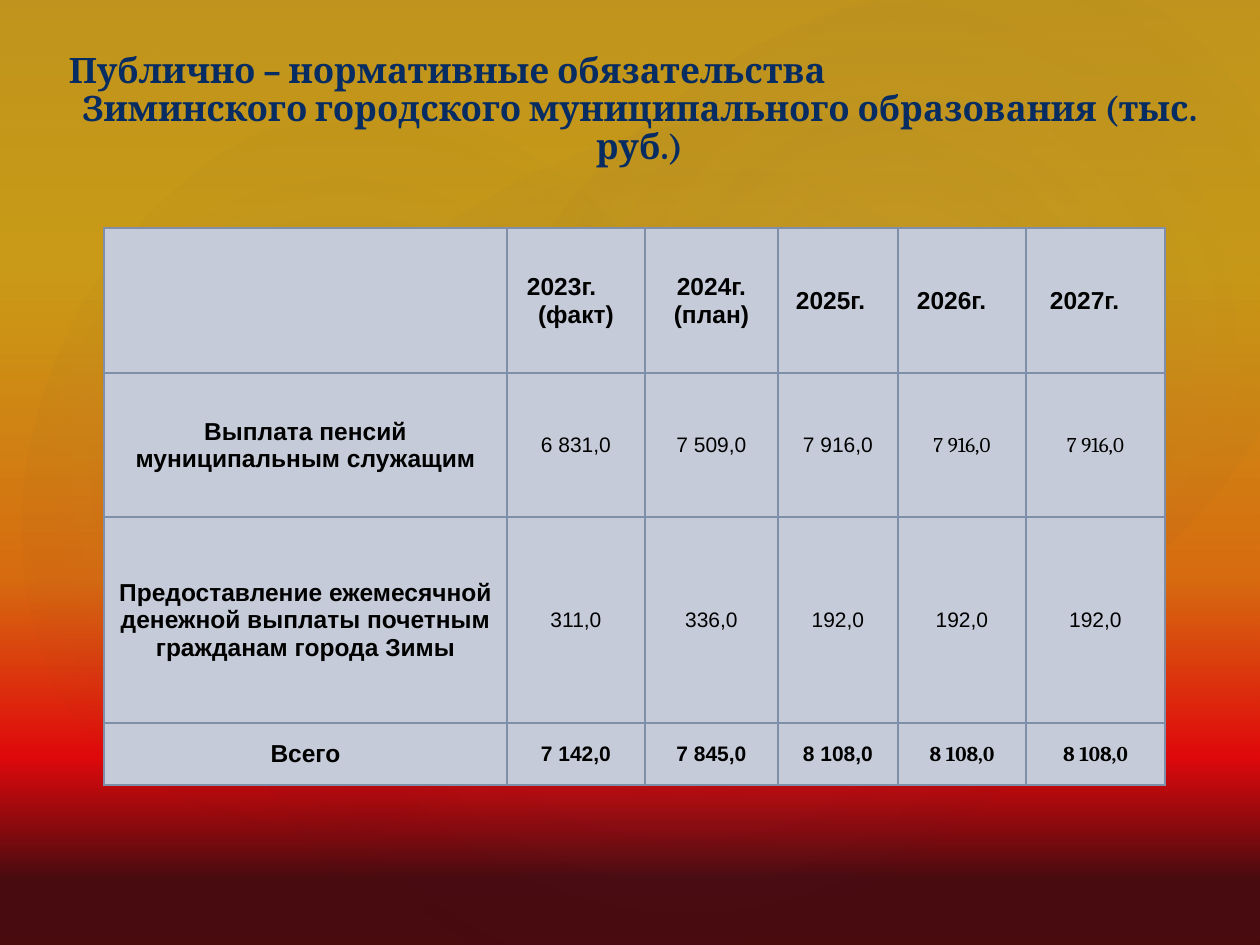
from lxml.etree import SubElement
from pptx import Presentation
from pptx.dml.color import RGBColor
from pptx.enum.shapes import MSO_SHAPE
from pptx.enum.text import MSO_ANCHOR, PP_ALIGN
from pptx.oxml.ns import qn
from pptx.util import Emu, Pt

NAVY = RGBColor(0x07, 0x2C, 0x62)
BLACK = RGBColor(0x00, 0x00, 0x00)
CELL = RGBColor(0xC5, 0xCB, 0xD8)
BORDER = RGBColor(0x7F, 0x8F, 0xA9)
AMBER = RGBColor(0xFF, 0xC0, 0x00)
ORANGE = RGBColor(0xFF, 0x7A, 0x00)
RED = RGBColor(0xFF, 0x03, 0x00)
MAROON = RGBColor(0x4D, 0x08, 0x08)
PLUM = RGBColor(0x50, 0x46, 0x52)
INDIGO = RGBColor(0x24, 0x28, 0x52)
MIST = RGBColor(0xC4, 0xBC, 0xC6)

WIDTH, HEIGHT = 1260, 945
SANS, SERIF = "Arial", "Cambria"
COLUMNS = [403, 138, 133, 120, 128, 139]
ROWS = [145, 144, 206, 62]
HEADERS = [
    (["2023г.", "(факт)"], 19),
    (["2024г.", "(план)"], None),
    (["2025г."], 17),
    (["2026г."], 18),
    (["2027г."], 23),
]
PAYMENTS = [
    ("Выплата пенсий муниципальным служащим",
     ["6 831,0", "7 509,0", "7 916,0", "7 916,0", "7 916,0"]),
    ("Предоставление ежемесячной денежной выплаты почетным гражданам города Зимы",
     ["311,0", "336,0", "192,0", "192,0", "192,0"]),
    ("Всего", ["7 142,0", "7 845,0", "8 108,0", "8 108,0", "8 108,0"]),
]


def px(length):
    return Emu(round(length * 914400 / 126))


class SlideBuilder:
    def __init__(self, presentation):
        self.slide = presentation.slides.add_slide(presentation.slide_layouts[6])

    def gradient(self, fill, element, stops, circle=False):
        fill.gradient()
        gradient = element.find(".//" + qn("a:gradFill"))
        for child in list(gradient):
            gradient.remove(child)
        stop_list = SubElement(gradient, qn("a:gsLst"))
        for position, color, opacity in stops:
            stop = SubElement(stop_list, qn("a:gs"), pos=str(position * 1000))
            shade = SubElement(stop, qn("a:srgbClr"), val=str(color))
            if opacity < 100:
                SubElement(shade, qn("a:alpha"), val=str(opacity * 1000))
        if circle:
            route = SubElement(gradient, qn("a:path"), {"path": "circle"})
            SubElement(route, qn("a:fillToRect"), l="50000", t="50000", r="50000", b="50000")
        else:
            SubElement(gradient, qn("a:lin"), ang="5400000", scaled="0")

    def background(self, stops):
        self.gradient(self.slide.background.fill, self.slide.element, stops)

    def shape(self, kind, box, rotation=0):
        shape = self.slide.shapes.add_shape(kind, *map(px, box))
        shape.rotation = rotation
        shape.shadow.inherit = False
        shape.line.fill.background()
        return shape

    def glow(self, kind, box, stops, rotation=0, circle=False):
        shape = self.shape(kind, box, rotation)
        self.gradient(shape.fill, shape.element, stops, circle)

    def text(self, paragraph, words, font, size, color, bold, align=PP_ALIGN.CENTER, indent=0):
        paragraph.alignment = align
        if indent:
            paragraph._p.get_or_add_pPr().set("marL", str(px(indent)))
        run = paragraph.add_run()
        run.text = words
        run.font.name = font
        run.font.size = Pt(size)
        run.font.bold = bold
        run.font.color.rgb = color

    def title(self, box, first_line, rest):
        shape = self.shape(MSO_SHAPE.ROUNDED_RECTANGLE, box)
        shape.fill.background()
        frame = shape.text_frame
        frame.word_wrap = True
        frame.vertical_anchor = MSO_ANCHOR.MIDDLE
        self.text(frame.paragraphs[0], first_line, SERIF, 20, NAVY, True, PP_ALIGN.LEFT, 7)
        self.text(frame.add_paragraph(), rest, SERIF, 20, NAVY, True)
        for paragraph in frame.paragraphs:
            paragraph.line_spacing = 0.9

    def table(self, left, top, columns, rows):
        frame = self.slide.shapes.add_table(
            len(rows), len(columns), px(left), px(top), px(sum(columns)), px(sum(rows)))
        table = frame.table
        for column, width in zip(table.columns, columns):
            column.width = px(width)
        for row, height in zip(table.rows, rows):
            row.height = px(height)
        last = len(rows) - 1
        for row_index, row in enumerate(table.rows):
            top_width = 1.5 if row_index == last else 1
            bottom_width = 1.5 if row_index >= last - 1 else 1
            for cell in row.cells:
                self.style_cell(cell, [1, 1, top_width, bottom_width])
        return table

    def style_cell(self, cell, widths):
        cell.fill.solid()
        cell.fill.fore_color.rgb = CELL
        cell.vertical_anchor = MSO_ANCHOR.MIDDLE
        cell.margin_left = cell.margin_right = cell.margin_top = px(1)
        cell.margin_bottom = 0
        properties = cell._tc.get_or_add_tcPr()
        for index, (side, width) in enumerate(zip("LRTB", widths)):
            line = SubElement(properties, qn("a:ln" + side), w=str(Pt(width)))
            solid = SubElement(line, qn("a:solidFill"))
            SubElement(solid, qn("a:srgbClr"), val=str(BORDER))
            properties.insert(index, line)

    def cell_text(self, cell, lines, font=SANS, size=14, bold=True, indent=None):
        frame = cell.text_frame
        for index, words in enumerate(lines):
            paragraph = frame.add_paragraph() if index else frame.paragraphs[0]
            if indent and index == 0:
                self.text(paragraph, words, font, size, BLACK, bold, PP_ALIGN.LEFT, indent)
            else:
                self.text(paragraph, words, font, size, BLACK, bold)


def main():
    presentation = Presentation()
    presentation.slide_width, presentation.slide_height = px(WIDTH), px(HEIGHT)
    builder = SlideBuilder(presentation)

    builder.background([(28, AMBER, 100), (61, ORANGE, 100), (80, RED, 100), (93, MAROON, 100)])
    builder.glow(MSO_SHAPE.RECTANGLE, (0, 0, WIDTH, HEIGHT), [(0, PLUM, 36), (100, INDIGO, 10)])
    for box, rotation, opacity in [
        ((189, 144, 998, 786), 328.7, 7),
        ((-38, 161, 764, 617), 294.3, 8),
        ((451, 16, 893, 655), 328.7, 8),
    ]:
        stops = [(0, MIST, opacity), (58, INDIGO, 0)]
        builder.glow(MSO_SHAPE.OVAL, box, stops, rotation, circle=True)

    builder.title((44, 55, 1191, 110), "Публично – нормативные обязательства",
                  "Зиминского городского муниципального образования (тыс. руб.)")

    table = builder.table(104, 228, COLUMNS, ROWS)
    for column, (lines, indent) in enumerate(HEADERS, 1):
        builder.cell_text(table.cell(0, column), lines, indent=indent)
    for row, (name, amounts) in enumerate(PAYMENTS, 1):
        builder.cell_text(table.cell(row, 0), [name])
        for column, amount in enumerate(amounts, 1):
            font = SERIF if column >= 4 and row != 2 else SANS
            builder.cell_text(table.cell(row, column), [amount], font, 12, name == "Всего")

    presentation.save("out.pptx")


if __name__ == "__main__":
    main()
